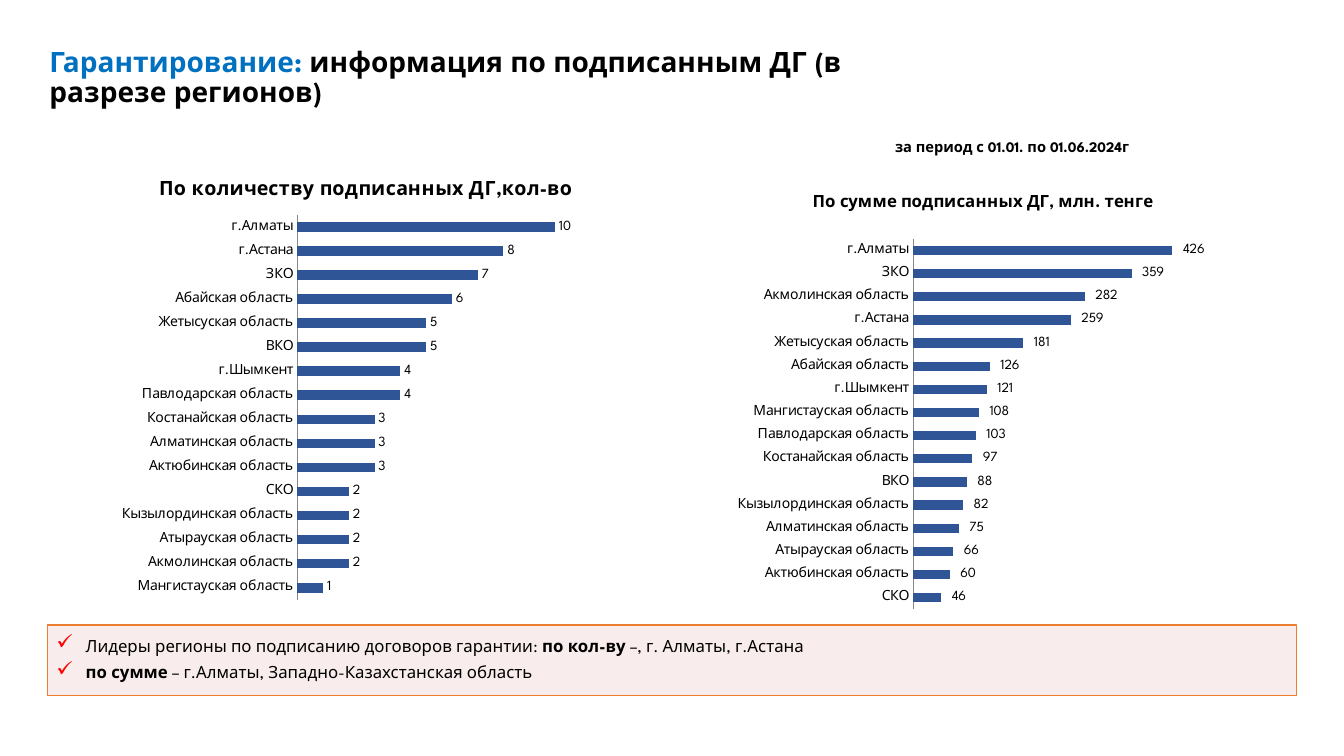
from pptx import Presentation
from pptx.chart.data import CategoryChartData
from pptx.dml.color import RGBColor
from pptx.enum.chart import XL_CHART_TYPE, XL_LABEL_POSITION, XL_TICK_MARK
from pptx.enum.shapes import MSO_SHAPE
from pptx.enum.text import MSO_ANCHOR, MSO_AUTO_SIZE, PP_ALIGN
from pptx.oxml import parse_xml
from pptx.oxml.ns import nsdecls, qn
from pptx.util import Inches, Pt

BAR = XL_CHART_TYPE.BAR_CLUSTERED
OUT_END = XL_LABEL_POSITION.OUTSIDE_END
NO_TICK = XL_TICK_MARK.NONE
RECT = MSO_SHAPE.RECTANGLE
TOP, MIDDLE = MSO_ANCHOR.TOP, MSO_ANCHOR.MIDDLE
LEFT = PP_ALIGN.LEFT
NO_FIT = MSO_AUTO_SIZE.NONE
TITLE_ONLY = 5


def color(code):
    return RGBColor.from_string(code)


class Deck:
    face = "League Spartan"
    ink, blue, navy = "000000", "0070C0", "2F5597"
    red, pink, orange, gray = "FF0000", "F2DCDB", "ED7D31", "868686"

    def __init__(self):
        self.prs = Presentation()
        self.prs.slide_width = Inches(13.33)
        self.prs.slide_height = Inches(7.5)
        layout = self.prs.slide_layouts[TITLE_ONLY]
        self.slide = self.prs.slides.add_slide(layout)

    def style(self, font, size, bold=False, ink=None):
        look = {"name": self.face, "size": Pt(size), "bold": bold}
        for key, value in look.items():
            setattr(font, key, value)
        font.color.rgb = color(ink or self.ink)

    def fill_in(self, para, runs, size):
        """Each run is (text, bold, colour or None)."""
        para.alignment = LEFT
        for words, bold, ink in runs:
            run = para.add_run()
            run.text = words
            self.style(run.font, size, bold, ink)

    def frame(self, shape, anchor, wrap=True):
        frame = shape.text_frame
        look = {"auto_size": NO_FIT, "word_wrap": wrap, "vertical_anchor": anchor}
        for key, value in look.items():
            setattr(frame, key, value)
        return frame

    def title(self, box, runs, size):
        shape = self.slide.shapes.title
        for key, value in zip(("left", "top", "width", "height"), box):
            setattr(shape, key, Inches(value))
        para = self.frame(shape, TOP).paragraphs[0]
        para.line_spacing = 0.9
        self.fill_in(para, runs, size)

    def text(self, box, runs, size):
        shape = self.slide.shapes.add_textbox(*map(Inches, box))
        self.fill_in(self.frame(shape, TOP, False).paragraphs[0], runs, size)

    def check(self, para):
        props = para._p.get_or_add_pPr()
        props.set("marL", str(Inches(0.3)))
        props.set("indent", str(Inches(-0.29)))
        for tag in (f'<a:buClr {nsdecls("a")}><a:srgbClr val="{self.red}"/></a:buClr>',
                    f'<a:buSzPct {nsdecls("a")} val="125000"/>',
                    f'<a:buChar {nsdecls("a")} char="✓"/>'):
            props.append(parse_xml(tag))

    def panel(self, box, lines, size):
        shape = self.slide.shapes.add_shape(RECT, *map(Inches, box))
        shape.shadow.inherit = False
        shape.fill.solid()
        shape.fill.fore_color.rgb = color(self.pink)
        tint = shape._element.spPr.find(qn("a:solidFill")).find(qn("a:srgbClr"))
        tint.append(parse_xml(f'<a:alpha {nsdecls("a")} val="50000"/>'))
        shape.line.color.rgb = color(self.orange)
        shape.line.width = Pt(1)
        frame = self.frame(shape, MIDDLE)
        pads = {"margin_left": 0.08, "margin_right": 0.08,
                "margin_top": 0.04, "margin_bottom": 0.04}
        for key, value in pads.items():
            setattr(frame, key, Inches(value))
        for i, runs in enumerate(lines):
            para = frame.add_paragraph() if i else frame.paragraphs[0]
            para.line_spacing = 0.9
            para.space_after = Pt(6)
            self.check(para)
            self.fill_in(para, runs, size)

    def bars(self, box, head, size, rows, top, plot, form="General"):
        """Rows run from the top bar down."""
        data = CategoryChartData()
        names, values = zip(*reversed(rows))
        data.categories = names
        data.add_series("Series 1", values)
        chart = self.slide.shapes.add_chart(BAR, *map(Inches, box), data).chart
        self.style(chart.font, 10)
        chart.has_legend = False

        # Heading
        para = chart.chart_title.text_frame.paragraphs[0]
        run = para.add_run()
        run.text = head
        self.style(run.font, size, True)

        # Axes
        axis = chart.category_axis
        axis.major_tick_mark = axis.minor_tick_mark = NO_TICK
        axis.format.line.color.rgb = color(self.gray)
        self.style(axis.tick_labels.font, 10)
        scale = chart.value_axis
        look = {"visible": False, "has_major_gridlines": False,
                "minimum_scale": 0, "maximum_scale": top}
        for key, value in look.items():
            setattr(scale, key, value)

        # Bars and labels
        group = chart.plots[0]
        group.gap_width = 150
        group.vary_by_categories = False
        series = group.series[0]
        series.format.fill.solid()
        series.format.fill.fore_color.rgb = color(self.navy)
        labels = series.data_labels
        look = {"show_value": True, "position": OUT_END,
                "number_format": form, "number_format_is_linked": False}
        for key, value in look.items():
            setattr(labels, key, value)
        self.style(labels.font, 10)

        # Inner plot area
        area = chart._chartSpace.chart.plotArea
        for old in area.findall(qn("c:layout")):
            area.remove(old)
        sides = "".join(f'<c:{k} val="{v}"/>' for k, v in zip("xywh", plot))
        area.insert(0, parse_xml(
            f'<c:layout {nsdecls("c")}><c:manualLayout><c:layoutTarget val="inner"/>'
            f'<c:xMode val="edge"/><c:yMode val="edge"/>{sides}'
            '</c:manualLayout></c:layout>'))


COUNTS = [
    ("г.Алматы", 10), ("г.Астана", 8), ("ЗКО", 7), ("Абайская область", 6),
    ("Жетысуская область", 5), ("ВКО", 5), ("г.Шымкент", 4),
    ("Павлодарская область", 4), ("Костанайская область", 3),
    ("Алматинская область", 3), ("Актюбинская область", 3), ("СКО", 2),
    ("Кызылординская область", 2), ("Атырауская область", 2),
    ("Акмолинская область", 2), ("Мангистауская область", 1)]
SUMS = [
    ("г.Алматы", 426), ("ЗКО", 359), ("Акмолинская область", 282),
    ("г.Астана", 259), ("Жетысуская область", 181), ("Абайская область", 126),
    ("г.Шымкент", 121), ("Мангистауская область", 108),
    ("Павлодарская область", 103), ("Костанайская область", 97), ("ВКО", 88),
    ("Кызылординская область", 82), ("Алматинская область", 75),
    ("Атырауская область", 66), ("Актюбинская область", 60), ("СКО", 46)]
MONEY = r'_-* #\ ##0_р_._-;\-* #\ ##0_р_._-;_-* "-"'


def main():
    deck = Deck()
    # Title and period
    deck.title((0.39, 0.43, 9.14, 0.77),
               [("Гарантирование: ", True, deck.blue),
                ("информация по подписанным ДГ (в разрезе регионов)", True, None)], 20)
    deck.text((8.78, 1.32, 2.63, 0.28),
              [("за период с 01.01. по 01.06.2024г", True, None)], 10.5)
    # Leaders
    deck.panel((0.47, 6.2, 12.39, 0.7), [
        [("Лидеры регионы по подписанию договоров гарантии: ", False, None),
         ("по кол-ву", True, None), (" –, г. Алматы, г.Астана", False, None)],
        [("по сумме ", True, None),
         ("– г.Алматы, Западно-Казахстанская область", False, None)]], 12)
    # Charts by region
    deck.bars((0.79, 1.6, 5.68, 4.44), "По количеству подписанных ДГ,кол-во", 14,
              COUNTS, 12, (0.38, 0.12, 0.54, 0.86))
    deck.bars((6.86, 1.75, 5.78, 4.43), "По сумме подписанных ДГ, млн. тенге", 12,
              SUMS, 450, (0.38, 0.14, 0.47, 0.83), MONEY)
    deck.prs.save("out.pptx")


if __name__ == "__main__":
    main()
